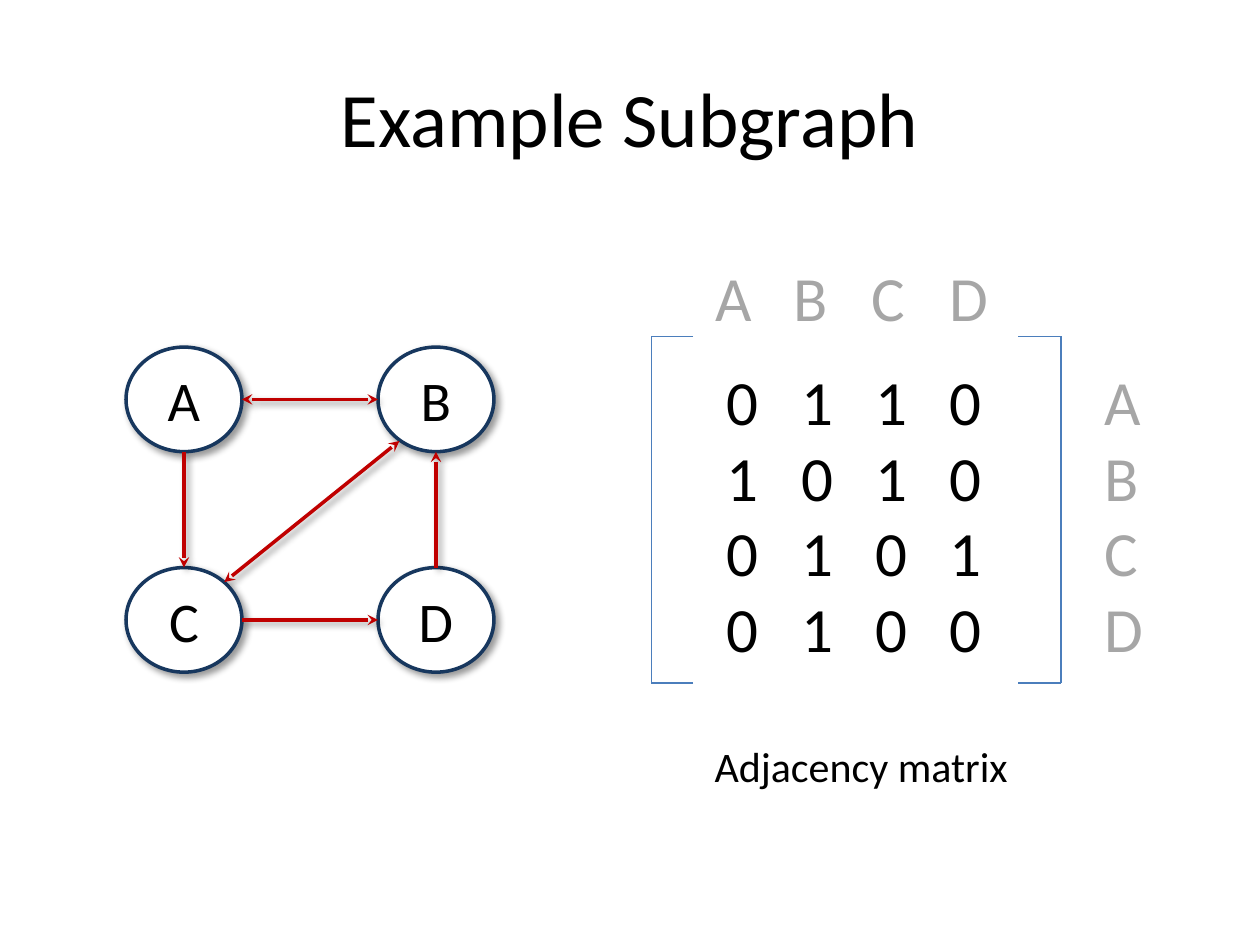
import pptx
import pptx.util
import pptx.dml.color
import pptx.enum.shapes
import pptx.enum.text
import pptx.oxml
import pptx.oxml.ns
from lxml import etree

Inches, Pt = pptx.util.Inches, pptx.util.Pt
RGB = pptx.dml.color.RGBColor
ALIGN = pptx.enum.text.PP_ALIGN
ANCHOR = pptx.enum.text.MSO_ANCHOR
KIND = pptx.enum.shapes
qn = pptx.oxml.ns.qn

BLACK, WHITE, GREY = RGB(0, 0, 0), RGB(255, 255, 255), RGB(0xA6, 0xA6, 0xA6)
NAVY, RED, BLUE = RGB(0x17, 0x37, 0x5E), RGB(0xC0, 0, 0), RGB(0x4B, 0x7E, 0xBC)

# Content
TITLE = "Example Subgraph"
NOTE = "Adjacency matrix"
NAMES = ["A", "B", "C", "D"]
MATRIX = ["0110", "1010", "0101", "0100"]

# Node centres
WIDE, HIGH = 0.92, 0.83
NODES = {"A": (1.46, 3.17), "B": (3.46, 3.17),
         "C": (1.46, 4.92), "D": (3.46, 4.92)}
RIGHT, LEFT = (WIDE / 2, 0), (-WIDE / 2, 0)
DOWN, UP = (0, HIGH / 2), (0, -HIGH / 2)

# Edges: start, its port, end, its port, two-way
EDGES = [("A", RIGHT, "B", LEFT, True),
         ("A", DOWN, "C", UP, False),
         ("B", (-0.29, 0.33), "C", (0.32, -0.3), True),
         ("D", UP, "B", DOWN, False),
         ("C", RIGHT, "D", LEFT, False)]

# Brackets: spine x, tip x
TOP, BASE = 2.67, 5.42
SIDES = [(5.17, 5.5), (8.42, 8.08)]


def effect(shape, soft):
    """Give the shape a soft shadow, or none at all."""
    box = etree.SubElement(shape._element.spPr, qn("a:effectLst"))
    if soft:
        drop = etree.SubElement(box, qn("a:outerShdw"), blurRad=str(Pt(4)),
                                dist=str(Pt(3)), dir="2700000", algn="tl",
                                rotWithShape="0")
        tint = etree.SubElement(drop, qn("a:srgbClr"), val="000000")
        etree.SubElement(tint, qn("a:alpha"), val="40000")


def line(parent, start, end, color, width, ends=(), soft=False):
    link = parent.add_connector(KIND.MSO_CONNECTOR.STRAIGHT,
                                *map(Inches, start + end))
    link.line.color.rgb = color
    link.line.width = Pt(width)
    for tag in ends:
        etree.SubElement(link.line._ln, qn(tag), type="stealth")
    effect(link, soft)


def style(para, size, color, align):
    para.alignment = align
    para.font.size, para.font.name = Pt(size), "Calibri"
    para.font.color.rgb = color


def text(parent, place, rows, size, color=BLACK, align=ALIGN.LEFT, pitch=0):
    """Write one paragraph per row, with cells spread over even tab stops."""
    box = parent.add_textbox(*map(Inches, place))
    frame = box.text_frame
    frame.word_wrap = True
    for num, row in enumerate(rows):
        para = frame.add_paragraph() if num else frame.paragraphs[0]
        para.text = row
        style(para, size, color, align)
        if pitch:
            prop = para._p.get_or_add_pPr()
            tabs = etree.SubElement(prop, qn("a:tabLst"))
            # Schema order puts tabs before the default run style
            prop.find(qn("a:defRPr")).addprevious(tabs)
            for col in range(1, row.count("\t") + 1):
                etree.SubElement(tabs, qn("a:tab"), algn="l",
                                 pos=str(Inches(pitch * col)))
    return frame


deck = pptx.Presentation()
deck.slide_width, deck.slide_height = Inches(10), Inches(7.5)
shapes = deck.slides.add_slide(deck.slide_layouts[6]).shapes

# Title
head = text(shapes, (0.5, 0.3, 9, 1.25), [TITLE], 44, align=ALIGN.CENTER)
head.vertical_anchor = ANCHOR.MIDDLE

# Graph nodes
for name, (x, y) in NODES.items():
    node = shapes.add_shape(KIND.MSO_SHAPE.OVAL, Inches(x - WIDE / 2),
                            Inches(y - HIGH / 2), Inches(WIDE), Inches(HIGH))
    node.fill.solid()
    node.fill.fore_color.rgb = WHITE
    node.line.color.rgb = NAVY
    node.line.width = Pt(2)
    effect(node, True)
    node.text_frame.vertical_anchor = ANCHOR.MIDDLE
    node.text_frame.text = name
    style(node.text_frame.paragraphs[0], 32, BLACK, ALIGN.CENTER)

# Graph edges
for src, out, dst, into, both in EDGES:
    start, end = [(NODES[n][0] + p[0], NODES[n][1] + p[1])
                  for n, p in ((src, out), (dst, into))]
    ends = ("a:headEnd", "a:tailEnd") if both else ("a:tailEnd",)
    line(shapes, start, end, RED, 2, ends, True)

# Matrix in its brackets
group = shapes.add_group_shape().shapes
for spine, tip in SIDES:
    for y in (TOP, BASE):
        line(group, (tip, y), (spine, y), BLUE, 0.75)
    line(group, (spine, BASE), (spine, TOP), BLUE, 0.75)
text(group, (5.67, 2.83, 2.75, 2.52), ["\t".join(row) for row in MATRIX],
     36, pitch=0.59)

# Matrix labels and caption
text(shapes, (4.92, 5.83, 3.83, 0.5), [NOTE], 24, align=ALIGN.CENTER)
text(shapes, (5.58, 2, 2.67, 0.71), ["\t".join(NAMES)], 36, GREY, pitch=0.62)
text(shapes, (8.67, 2.83, 0.75, 2.52), NAMES, 36, GREY)

deck.save("out.pptx")
